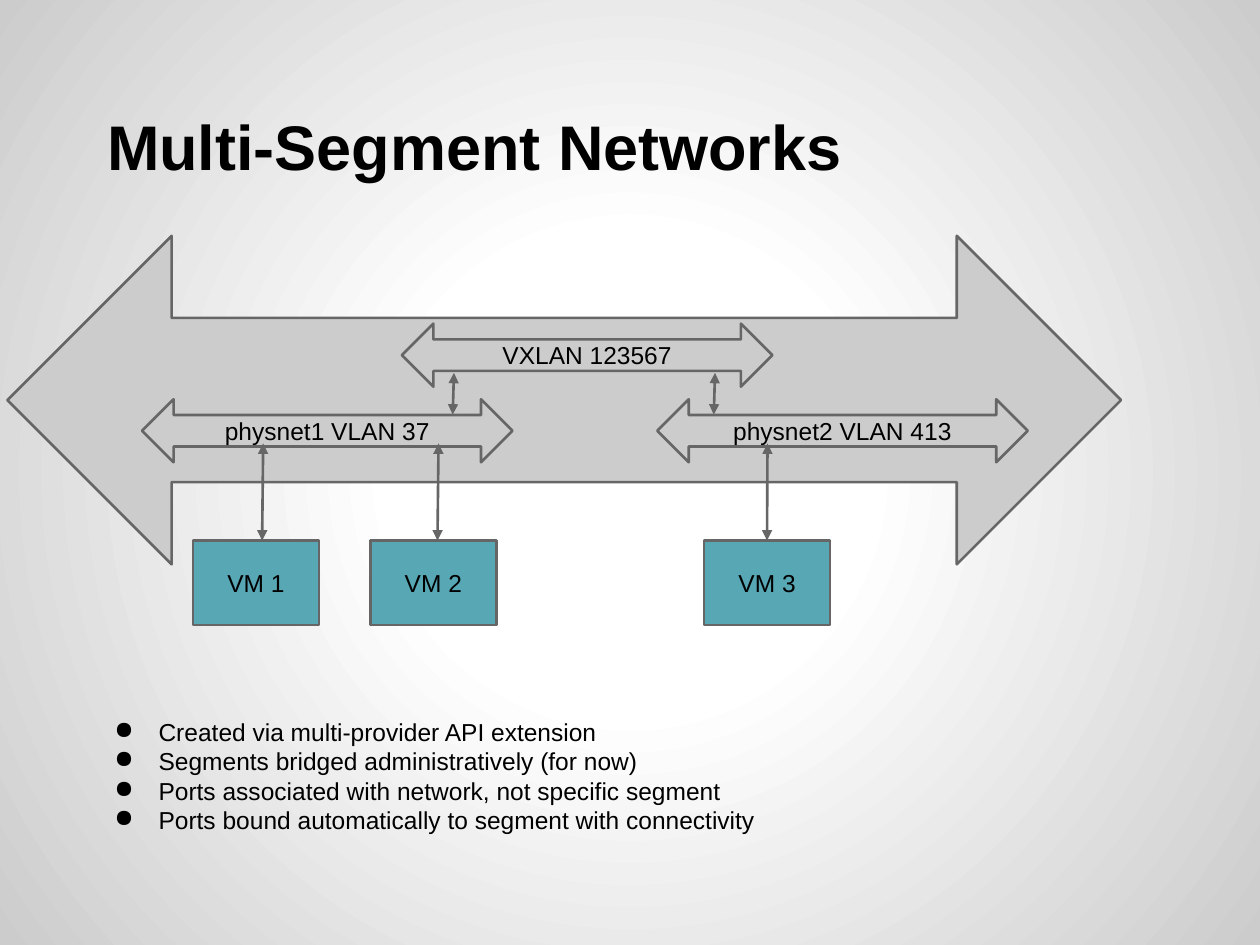
from dataclasses import dataclass

from lxml.etree import SubElement
from pptx import Presentation
from pptx.dml.color import RGBColor
from pptx.enum.shapes import MSO_CONNECTOR, MSO_SHAPE
from pptx.enum.text import MSO_ANCHOR, MSO_AUTO_SIZE, PP_ALIGN
from pptx.oxml import parse_xml
from pptx.oxml.ns import nsdecls, qn
from pptx.slide import Slide
from pptx.text.text import TextFrame
from pptx.util import Pt

BLACK = RGBColor(0x00, 0x00, 0x00)
WHITE = RGBColor(0xFF, 0xFF, 0xFF)
GREY = RGBColor(0xCC, 0xCC, 0xCC)
DARK_GREY = RGBColor(0x66, 0x66, 0x66)
TEAL = RGBColor(0x57, 0xA7, 0xB5)

FONT = "Arial"
INSET = Pt(7.2)
LINE_WIDTH = Pt(1.5)

SEGMENT_TOP = 228.2
MACHINE_TOP = 308.9
BRIDGE_TOP, BRIDGE_BOTTOM = 213.1, 236.9
PORT_TOP = 253.4


@dataclass(frozen=True)
class Block:
    left: float
    top: float
    width: float
    height: float
    kind: MSO_SHAPE
    fill: RGBColor
    label: str = ""


@dataclass(frozen=True)
class Link:
    top_x: float
    top: float
    bottom_x: float
    bottom: float


def segment(left: float, top: float, label: str) -> Block:
    return Block(left, top, 211.7, 36, MSO_SHAPE.LEFT_RIGHT_ARROW, GREY, label)


def machine(left: float, label: str) -> Block:
    return Block(left, MACHINE_TOP, 72, 48.2, MSO_SHAPE.FLOWCHART_PROCESS, TEAL, label)


BLOCKS = [
    Block(4.2, 134.8, 636.4, 187.7, MSO_SHAPE.LEFT_RIGHT_ARROW, GREY),
    segment(229.7, 185, "VXLAN 123567"),
    segment(81.2, SEGMENT_TOP, "physnet1 VLAN 37"),
    segment(375.6, SEGMENT_TOP, "physnet2 VLAN 413"),
    machine(110.3, "VM 1"),
    machine(211.7, "VM 2"),
    machine(402.4, "VM 3"),
]

LINKS = [
    Link(259.4, BRIDGE_TOP, 258.7, BRIDGE_BOTTOM),
    Link(408.6, BRIDGE_TOP, 407.9, BRIDGE_BOTTOM),
    Link(150.4, PORT_TOP, 149.8, MACHINE_TOP),
    Link(250.6, PORT_TOP, 250, MACHINE_TOP),
    Link(438.6, PORT_TOP, 438.3, MACHINE_TOP),
]

BULLETS = [
    "Created via multi-provider API extension",
    "Segments bridged administratively (for now)",
    "Ports associated with network, not specific segment",
    "Ports bound automatically to segment with connectivity",
]


def set_background(slide: Slide) -> None:
    """Fill the background with a circular gradient from white to grey."""
    slide.background.fill.solid()
    properties = slide.element.find(".//" + qn("p:bgPr"))
    stops = "".join(
        f'<a:gs pos="{position * 1000}"><a:srgbClr val="{color}"/></a:gs>'
        for position, color in ((0, WHITE), (30, WHITE), (100, GREY))
    )
    properties[0] = parse_xml(
        f'<a:gradFill {nsdecls("a")}><a:gsLst>{stops}</a:gsLst><a:path path="circle">'
        '<a:fillToRect l="50000" t="50000" r="50000" b="50000"/></a:path></a:gradFill>'
    )


def format_text(frame: TextFrame, anchor: MSO_ANCHOR, alignment: PP_ALIGN,
                size: float = 14, bold: bool = False) -> None:
    frame.word_wrap = True
    frame.auto_size = MSO_AUTO_SIZE.NONE
    frame.vertical_anchor = anchor
    frame.margin_left = frame.margin_right = INSET
    frame.margin_top = frame.margin_bottom = INSET
    for paragraph in frame.paragraphs:
        paragraph.alignment = alignment
        paragraph.space_before = Pt(0)
        paragraph.font.name = FONT
        paragraph.font.size = Pt(size)
        paragraph.font.bold = bold
        paragraph.font.color.rgb = BLACK


def set_title(slide: Slide, text: str) -> None:
    title = slide.shapes.title
    title.left, title.top, title.width, title.height = Pt(36), Pt(21.6), Pt(648), Pt(90)
    title.text_frame.text = text
    format_text(title.text_frame, MSO_ANCHOR.BOTTOM, PP_ALIGN.LEFT, 36, True)
    properties = title.text_frame.paragraphs[0]._p.get_or_add_pPr()
    properties.set("indent", str(Pt(18)))


def draw_block(slide: Slide, block: Block) -> None:
    shape = slide.shapes.add_shape(
        block.kind, Pt(block.left), Pt(block.top), Pt(block.width), Pt(block.height)
    )
    shape.shadow.inherit = False
    shape.fill.solid()
    shape.fill.fore_color.rgb = block.fill
    shape.line.color.rgb = DARK_GREY
    shape.line.width = LINE_WIDTH
    if block.label:
        shape.text_frame.text = block.label
        format_text(shape.text_frame, MSO_ANCHOR.MIDDLE, PP_ALIGN.CENTER)


def draw_link(slide: Slide, link: Link) -> None:
    """Draw a line with an arrowhead at both ends."""
    connector = slide.shapes.add_connector(
        MSO_CONNECTOR.STRAIGHT,
        Pt(link.top_x), Pt(link.top), Pt(link.bottom_x), Pt(link.bottom),
    )
    connector.line.color.rgb = DARK_GREY
    connector.line.width = LINE_WIDTH
    line = connector.line._get_or_add_ln()
    for end in ("a:headEnd", "a:tailEnd"):
        SubElement(line, qn(end), type="triangle", w="med", len="med")
    SubElement(connector._element.spPr, qn("a:effectLst"))


def draw_bullets(slide: Slide, lines: list[str]) -> None:
    box = slide.shapes.add_textbox(Pt(47.5), Pt(402.5), Pt(615.6), Pt(104.4))
    box.text_frame.text = "\n".join(lines)
    format_text(box.text_frame, MSO_ANCHOR.TOP, PP_ALIGN.LEFT)
    for paragraph in box.text_frame.paragraphs:
        properties = paragraph._p.get_or_add_pPr()
        properties.set("marL", str(Pt(36)))
        properties.set("indent", str(Pt(-25.2)))
        bullet = parse_xml(f'<a:buChar {nsdecls("a")} char="●"/>')
        properties.find(qn("a:defRPr")).addprevious(bullet)


def main() -> None:
    presentation = Presentation()
    presentation.slide_width, presentation.slide_height = Pt(720), Pt(540)
    slide = presentation.slides.add_slide(presentation.slide_layouts[5])
    set_background(slide)
    set_title(slide, "Multi-Segment Networks")
    for block in BLOCKS:
        draw_block(slide, block)
    for link in LINKS:
        draw_link(slide, link)
    draw_bullets(slide, BULLETS)
    presentation.save("out.pptx")


if __name__ == "__main__":
    main()
